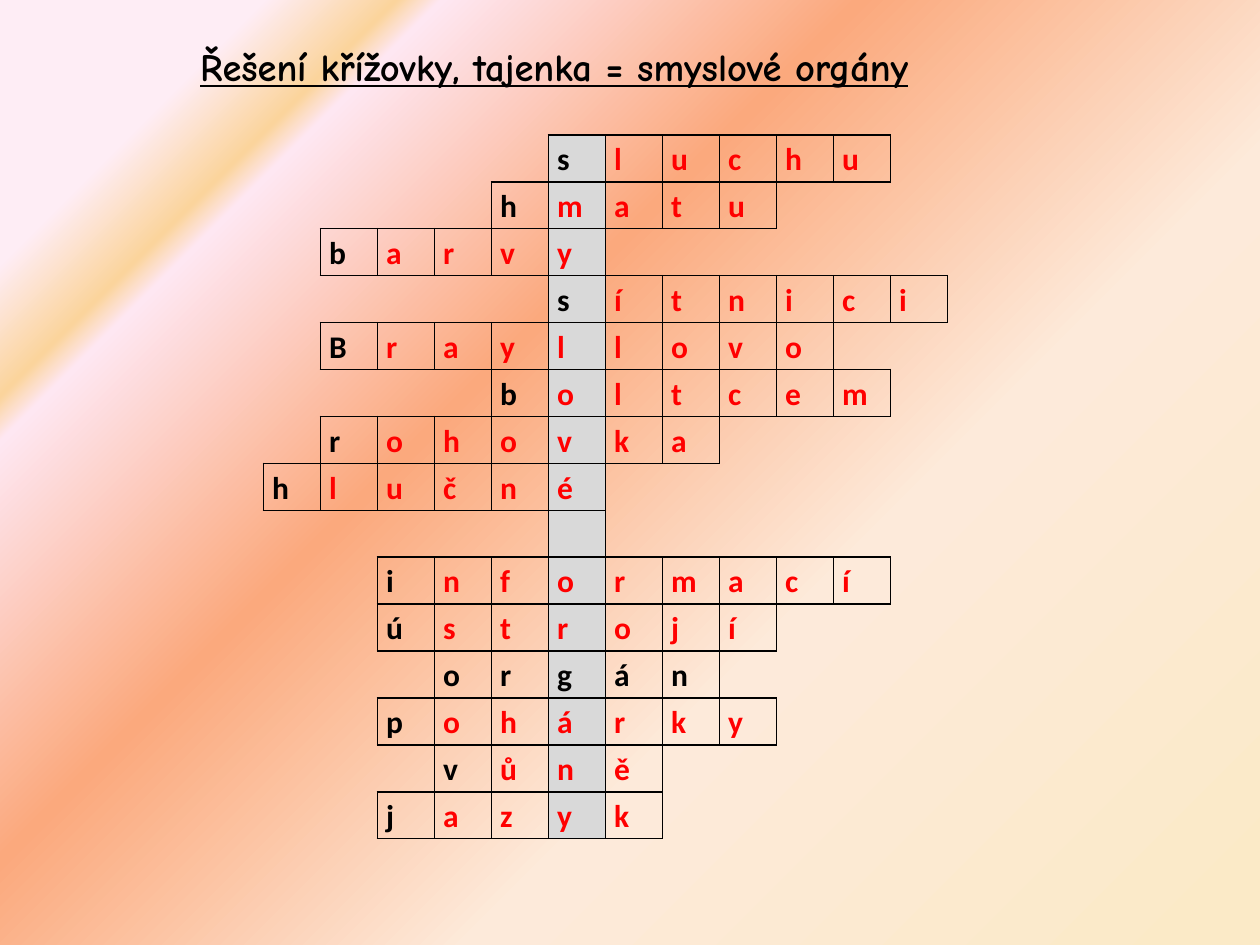
from dataclasses import dataclass

from pptx import Presentation, util as u
from pptx.dml.color import RGBColor
from pptx.enum import text
from pptx.oxml import parse_xml
from pptx.oxml.ns import nsdecls


@dataclass(frozen=True)
class Theme:
    ink: str = "000000"
    red: str = "FF0000"
    gray: str = "D9D9D9"
    head: str = "Comic Neue"
    body: str = "Calibri"
    big: int = 22
    mid: int = 18
    line: int = 1
    glow: tuple = ((2, "FBEAC7"), (36, "FDEADA"), (61, "FBA97D"),
                   (80, "FEE7F2"), (82, "FBD49C"), (88, "FEEDF5"))


PLAIN = "{2D5ABB26-0587-4C30-8999-92F81FD0307C}"  # table style without grid
SIDES = {"L": (0, -1), "R": (0, 1), "T": (-1, 0), "B": (1, 0)}
KEY = 5  # column that spells the hidden phrase
COLS = 12
# First column and letters of each answer
WORDS = [(5, "sluchu"), (4, "hmatu"), (1, "barvy"), (5, "sítnici"),
         (1, "Brayllovo"), (4, "boltcem"), (1, "rohovka"), (0, "hlučné"),
         (5, " "), (2, "informací"), (2, "ústrojí"), (3, "orgán"),
         (2, "pohárky"), (3, "vůně"), (2, "jazyk")]
GIVEN = "orgán"  # printed wholly in black


def put(item, **vals):
    for name, val in vals.items():
        setattr(item, name, val)


class Deck:
    def __init__(self, theme):
        self.theme = theme
        self.prs = Presentation()
        put(self.prs, slide_width=u.Inches(10), slide_height=u.Inches(7.5))
        self.slide = self.prs.slides.add_slide(self.prs.slide_layouts[6])

    def back(self):
        self.slide.background.fill.solid()
        old = self.slide.element.xpath("./p:cSld/p:bg/p:bgPr/a:solidFill")[0]
        stops = "".join(
            f'<a:gs pos="{pos * 1000}"><a:srgbClr val="{hue}"/></a:gs>'
            for pos, hue in self.theme.glow)
        new = parse_xml(
            f'<a:gradFill {nsdecls("a")} rotWithShape="1">'
            f'<a:gsLst>{stops}</a:gsLst><a:path path="circle">'
            '<a:fillToRect l="100000" t="100000"/></a:path></a:gradFill>')
        old.getparent().replace(old, new)

    def label(self, para, words, hue, **vals):
        run = para.add_run()
        run.text = words
        put(run.font, bold=True, **vals)
        run.font.color.rgb = RGBColor.from_string(hue)

    def title(self, words, *box):
        frame = self.slide.shapes.add_textbox(*map(u.Inches, box)).text_frame
        put(frame, word_wrap=True, auto_size=text.MSO_AUTO_SIZE.SHAPE_TO_FIT_TEXT)
        t = self.theme
        self.label(frame.paragraphs[0], words, t.ink, name=t.head,
                   size=u.Pt(t.big), underline=True)

    def edge(self, cell, side, shown):
        fill = (f'<a:solidFill><a:srgbClr val="{self.theme.ink}"/></a:solidFill>'
                if shown else "<a:noFill/>")
        width = u.Pt(self.theme.line)
        cell.get_or_add_tcPr().append(parse_xml(
            f'<a:ln{side} {nsdecls("a")} w="{width}">{fill}</a:ln{side}>'))

    def grid(self, words, *box):
        """Draw the crossword; an edge shows where it touches a letter cell."""
        t = self.theme
        table = self.slide.shapes.add_table(
            len(words), COLS, *map(u.Inches, box)).table
        put(table, first_row=False, horz_banding=False)
        table._tbl.tblPr.find("{*}tableStyleId").text = PLAIN
        for col in table.columns:
            col.width = u.Inches(box[2] / COLS)
        for row in table.rows:
            row.height = u.Inches(box[3] / len(words))
        used = {(r, start + i): (word, i) for r, (start, word) in enumerate(words)
                for i in range(len(word))}
        for r in range(len(words)):
            for c in range(COLS):
                cell = table.cell(r, c)
                put(cell, margin_left=u.Inches(0.07), margin_right=u.Inches(0.07),
                    margin_top=0, margin_bottom=0)
                for side, (dr, dc) in SIDES.items():
                    self.edge(cell._tc, side,
                              (r, c) in used or (r + dr, c + dc) in used)
                if (r, c) in used and c == KEY:
                    cell.fill.solid()
                    cell.fill.fore_color.rgb = RGBColor.from_string(t.gray)
                else:
                    cell.fill.background()
                word, i = used.get((r, c), ("", 0))
                if word.strip():
                    para = cell.text_frame.paragraphs[0]
                    para.line_spacing = 1.15
                    hue = t.ink if i == 0 or word == GIVEN else t.red
                    self.label(para, word[i], hue, name=t.body, size=u.Pt(t.mid))


def main():
    deck = Deck(Theme())
    deck.back()
    deck.grid(WORDS, 2.09, 1.07, 5.43, 5.59)
    deck.title("Řešení křížovky, tajenka = smyslové orgány", 1.49, 0.29, 7.09, 0.47)
    deck.prs.save("out.pptx")


if __name__ == "__main__":
    main()
